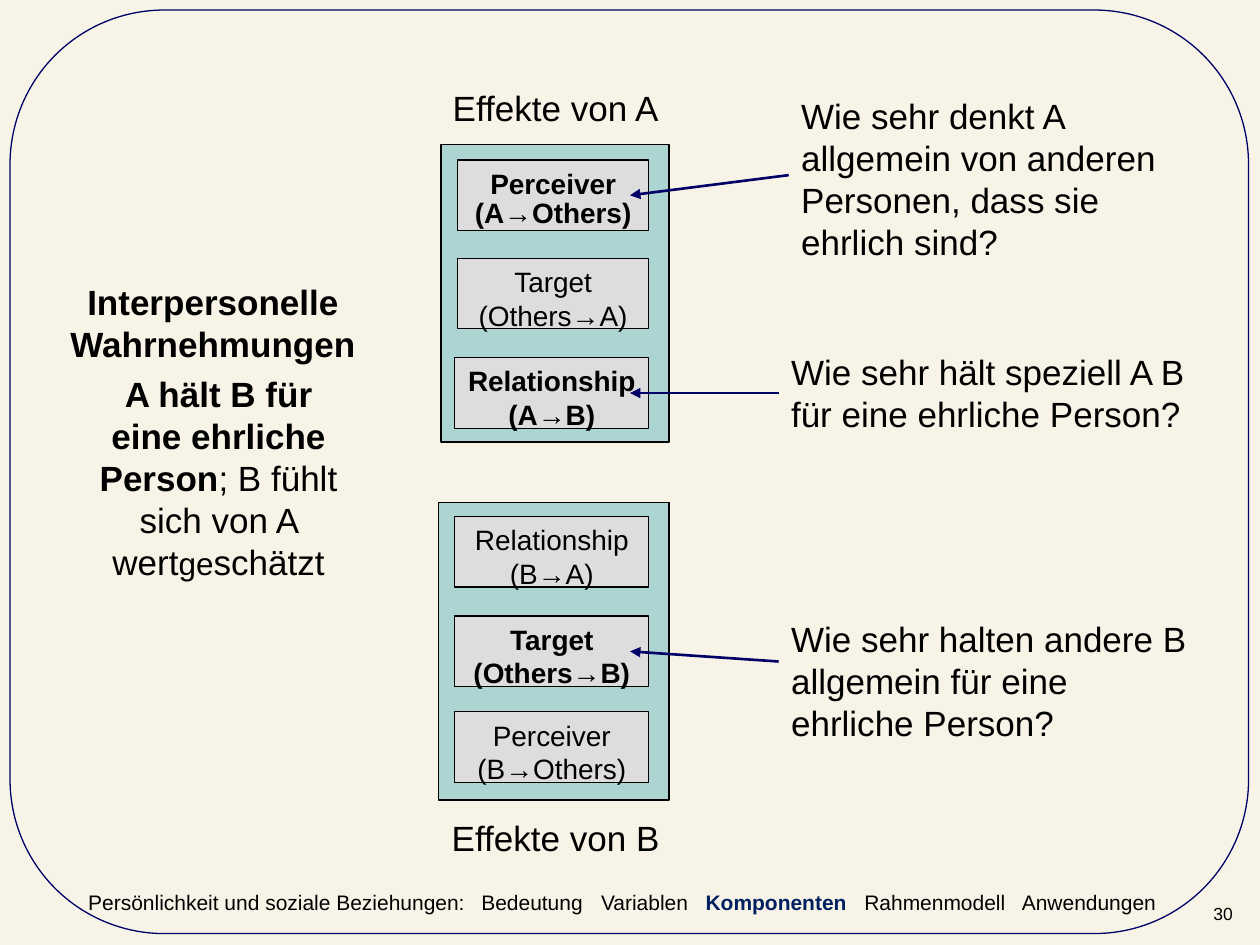
from dataclasses import dataclass

from lxml.etree import SubElement
from pptx import Presentation
from pptx.dml.color import RGBColor
from pptx.enum.shapes import MSO_CONNECTOR as Connector, MSO_SHAPE as Shape
from pptx.enum.text import MSO_ANCHOR as Anchor, PP_ALIGN as Align
from pptx.oxml.ns import qn
from pptx.util import Inches, Pt


@dataclass(frozen=True)
class Theme:
    font: str = "Arial"
    background: str = "F7F4E7"
    navy: str = "000066"
    highlight: str = "002060"
    panel: str = "ACD4D3"
    card: str = "DDDDDD"
    black: str = "000000"
    body: int = 20
    small_body: int = 18
    label: int = 16
    footer: int = 12
    number: int = 10
    outline: float = 0.75
    arrow: float = 1.5


@dataclass(frozen=True)
class Span:
    text: str
    size: int
    bold: bool = False
    color: str = "000000"


@dataclass(frozen=True)
class Area:
    left: float
    top: float
    width: float
    height: float

    def lengths(self) -> list:
        return [Inches(v) for v in (self.left, self.top, self.width, self.height)]


@dataclass(frozen=True)
class Component:
    area: Area
    lines: tuple[str, ...]
    bold: bool = False
    last_spacing: float | None = None


@dataclass(frozen=True)
class Question:
    area: Area
    text: str
    start: tuple[float, float]
    end: tuple[float, float]


THEME = Theme()
CARD_HEIGHT = 0.56

PANELS = [Area(3.5, 1.15, 1.81, 2.36), Area(3.48, 3.99, 1.83, 2.36)]

COMPONENTS = [
    Component(Area(3.63, 1.27, 1.52, CARD_HEIGHT), ("Perceiver", "(A→Others)"), True, 0.9),
    Component(Area(3.63, 2.05, 1.52, CARD_HEIGHT), ("Target", "(Others→A)")),
    Component(Area(3.61, 2.84, 1.54, CARD_HEIGHT), ("Relationship (A→B)",), True),
    Component(Area(3.61, 4.1, 1.54, CARD_HEIGHT), ("Relationship (B→A)",)),
    Component(Area(3.61, 4.89, 1.54, CARD_HEIGHT), ("Target", "(Others→B)"), True),
    Component(Area(3.61, 5.65, 1.54, CARD_HEIGHT), ("Perceiver", "(B→Others)")),
]

QUESTIONS = [
    Question(Area(6.26, 0.7, 3.39, 1.43),
             "Wie sehr denkt A allgemein von anderen Personen, dass sie ehrlich sind?",
             (6.26, 1.39), (5, 1.55)),
    Question(Area(6.18, 2.73, 3.39, 0.77),
             "Wie sehr hält speziell A B für eine ehrliche Person?",
             (6.18, 3.12), (5, 3.12)),
    Question(Area(6.18, 4.85, 3.39, 1.1),
             "Wie sehr halten andere B allgemein für eine ehrliche Person?",
             (6.18, 5.25), (5, 5.17)),
]


def rgb(color: str) -> RGBColor:
    return RGBColor.from_string(color)


def style_run(run, span: Span) -> None:
    run.font.name = THEME.font
    run.font.size = Pt(span.size)
    run.font.bold = span.bold
    run.font.color.rgb = rgb(span.color)


def set_margins(frame, side: float, vertical: float) -> None:
    frame.margin_left = frame.margin_right = Inches(side)
    frame.margin_top = frame.margin_bottom = Inches(vertical)


def add_text(page, area: Area, spans: list[Span], align=Align.LEFT,
             margins: tuple[float, float] = (0.1, 0.05), anchor=Anchor.TOP):
    frame = page.shapes.add_textbox(*area.lengths()).text_frame
    frame.word_wrap = True
    frame.vertical_anchor = anchor
    set_margins(frame, *margins)
    para = frame.paragraphs[0]
    para.alignment = align
    for span in spans:
        run = para.add_run()
        run.text = span.text
        style_run(run, span)
    return para


def add_outlined(page, kind, area: Area, line: str, fill: str | None = None):
    box = page.shapes.add_shape(kind, *area.lengths())
    box.shadow.inherit = False
    if fill:
        box.fill.solid()
        box.fill.fore_color.rgb = rgb(fill)
    else:
        box.fill.background()
    box.line.color.rgb = rgb(line)
    box.line.width = Pt(THEME.outline)
    return box


def add_component(page, component: Component) -> None:
    box = add_outlined(page, Shape.RECTANGLE, component.area, THEME.black, THEME.card)
    frame = box.text_frame
    frame.word_wrap = True
    frame.vertical_anchor = Anchor.TOP
    set_margins(frame, 0, 0.05)
    frame.text = "\n".join(component.lines)
    for para in frame.paragraphs:
        para.alignment = Align.CENTER
        style_run(para.runs[0], Span(para.text, THEME.label, component.bold))
    if component.last_spacing:
        frame.paragraphs[-1].line_spacing = component.last_spacing


def add_arrow(page, start: tuple[float, float], end: tuple[float, float]) -> None:
    points = [Inches(v) for v in (*start, *end)]
    arrow = page.shapes.add_connector(Connector.STRAIGHT, *points)
    arrow.line.color.rgb = rgb(THEME.navy)
    arrow.line.width = Pt(THEME.arrow)
    SubElement(arrow.line._get_or_add_ln(), qn("a:tailEnd"), type="triangle")
    SubElement(arrow._element.spPr, qn("a:effectLst"))


def add_tab_stops(para, positions: list[float]) -> None:
    stops = SubElement(para._p.get_or_add_pPr(), qn("a:tabLst"))
    for position in positions:
        SubElement(stops, qn("a:tab"), pos=str(Inches(position)), algn="l")


def main() -> None:
    deck = Presentation()
    deck.slide_width, deck.slide_height = Inches(10), Inches(7.5)
    page = deck.slides.add_slide(deck.slide_layouts[6])
    page.background.fill.solid()
    page.background.fill.fore_color.rgb = rgb(THEME.background)

    # Frame and slide number
    border = add_outlined(page, Shape.ROUNDED_RECTANGLE, Area(0.08, 0.08, 9.83, 7.33), THEME.navy)
    border.adjustments[0] = 0.167
    add_text(page, Area(9.62, 7.15, 0.38, 0.19), [Span("30", THEME.number)],
             margins=(0.01, 0.01), anchor=Anchor.BOTTOM)

    # Perceptions on the left
    add_text(page, Area(0.35, 2.18, 2.68, 0.77),
             [Span("Interpersonelle Wahrnehmungen", THEME.body, True)], Align.CENTER)
    add_text(page, Area(0.67, 2.91, 2.13, 1.77), [
        Span("A hält B für eine ehrliche Person", THEME.body, True),
        Span("; B fühlt sich von A wert", THEME.body),
        Span("ge", THEME.small_body),
        Span("schätzt", THEME.body),
    ], Align.CENTER)

    # Effect panels with their components
    for top, person in ((0.64, "A"), (6.43, "B")):
        add_text(page, Area(3.27, top, 2.28, 0.43),
                 [Span(f"Effekte von {person}", THEME.body)], Align.CENTER)
    for panel in PANELS:
        add_outlined(page, Shape.RECTANGLE, panel, THEME.black, THEME.panel)
    for component in COMPONENTS:
        add_component(page, component)

    # Questions pointing at components
    for question in QUESTIONS:
        add_text(page, question.area, [Span(question.text, THEME.body)])
        add_arrow(page, question.start, question.end)

    # Chapter navigation
    navigation = add_text(page, Area(0.69, 7.05, 8.75, 0.22), [
        Span("Persönlichkeit und soziale Beziehungen:\tBedeutung\tVariablen\t", THEME.footer),
        Span("Komponenten", THEME.footer, True, THEME.highlight),
        Span("\tRahmenmodell\tAnwendungen", THEME.footer),
    ], margins=(0.01, 0.01))
    add_tab_stops(navigation, [3.12, 4.07, 4.9, 6.16, 7.41])

    deck.save("out.pptx")


if __name__ == "__main__":
    main()
